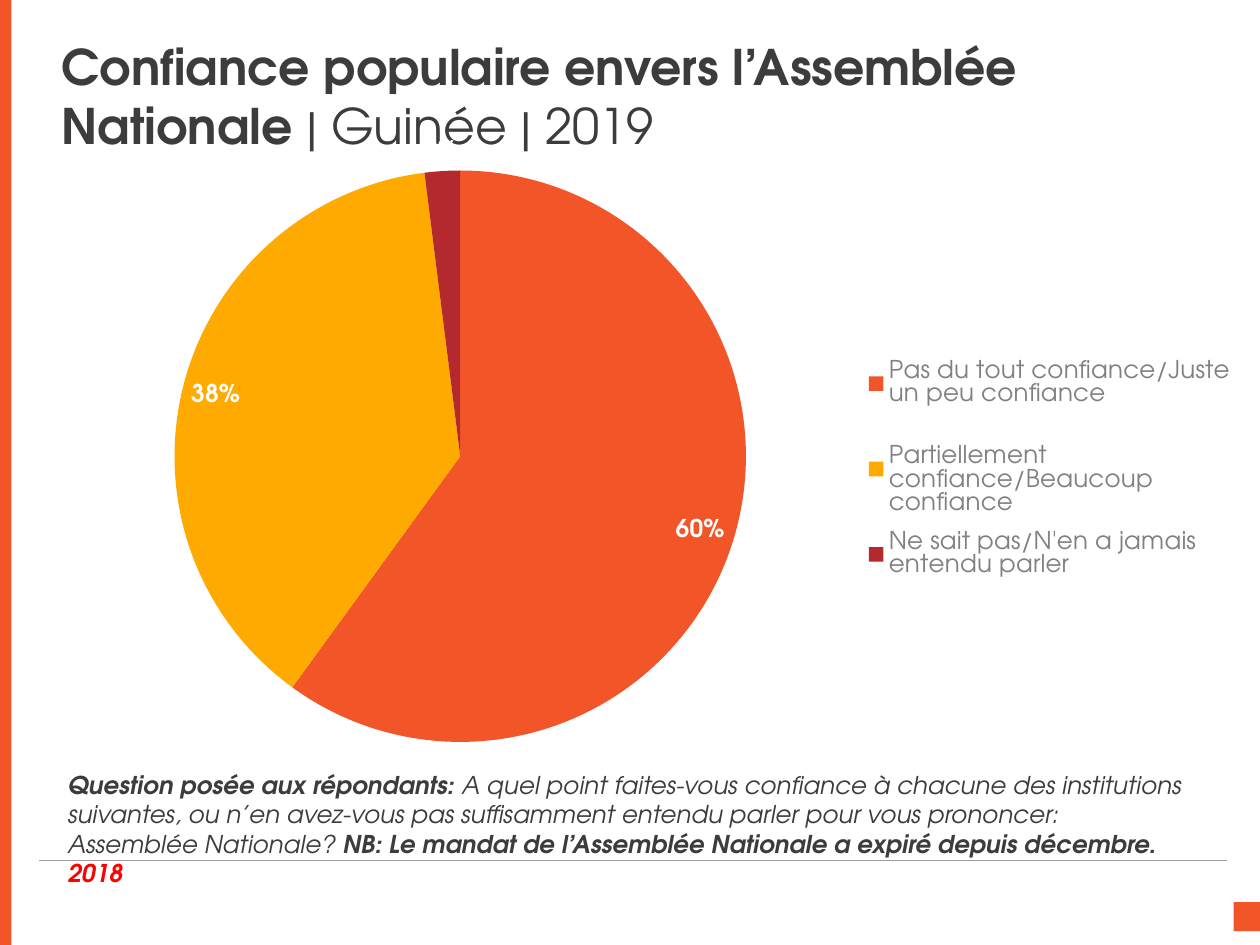
"""Build the slide on public trust in the Guinean National Assembly."""
from lxml.etree import SubElement
from pptx import Presentation
from pptx.chart.data import CategoryChartData
from pptx.dml.color import RGBColor
from pptx.enum.chart import XL_CHART_TYPE, XL_LABEL_POSITION, XL_LEGEND_POSITION
from pptx.enum.shapes import MSO_CONNECTOR, MSO_SHAPE
from pptx.enum.text import MSO_ANCHOR
from pptx.oxml import parse_xml
from pptx.oxml.ns import nsdecls, qn
from pptx.util import Inches, Pt

THEME = {
    "font": "TeX Gyre Adventor",
    "ink": "3C3C3C", "muted": "808080", "rule": "9E9E9E",
    "accent": "F25528", "alert": "FF0000", "label": "FFFFFF",
    "slices": ("F25528", "FFAA00", "B4292D"),
    "title": 28, "body": 14, "chart": 10, "rule_width": 0.25,
}
TITLE = [
    ("Confiance populaire envers l’Assemblée Nationale ", {"bold": True}),
    ("| Guinée | 2019", {}),
]
QUESTION = [
    ("Question posée aux répondants: ", {"bold": True}),
    ("A quel point faites-vous confiance à chacune des institutions suivantes, "
     "ou n’en avez-vous pas suffisamment entendu parler pour vous prononcer: "
     "Assemblée Nationale? ", {}),
    ("NB: Le mandat de l’Assemblée Nationale a expiré depuis décembre. ", {"bold": True}),
    ("2018", {"bold": True, "color": "alert"}),
]
ANSWERS = [
    ("Pas du tout confiance/Juste un peu confiance", 0.60),
    ("Partiellement confiance/Beaucoup confiance", 0.38),
    ("Ne sait pas/N'en a jamais entendu parler", 0.02),
]
BARS = [(0, 0, 0.09, 7.5), (9.79, 7.16, 0.22, 0.23)]
RULE = (0.31, 6.83, 9.74, 6.83)
TITLE_BOX = (0.39, 0.38, 9.32, 0.76)
QUESTION_BOX = (0.44, 6.06, 9.06, 0.69)
CHART_BOX = (0.44, 0.98, 9.45, 5.08)
PIE_SHARE = (0.1, 0.07, 0.48, 0.9)
LEGEND_SHARE = (0.67, 0.31, 0.33, 0.46)


def inches(values):
    return [Inches(v) for v in values]


def set_font(font, size, color, bold=False, italic=False):
    font.name, font.size = THEME["font"], Pt(size)
    font.bold, font.italic = bold, italic
    font.color.rgb = RGBColor.from_string(color)


def add_text(s, box, runs, size, anchor, italic=False):
    tf = s.shapes.add_textbox(*inches(box)).text_frame
    tf.word_wrap, tf.vertical_anchor = True, anchor
    p = tf.paragraphs[0]
    for text, style in runs:
        r = p.add_run()
        r.text = text
        set_font(r.font, size, THEME[style.get("color", "ink")],
                 style.get("bold", False), italic)


def add_bar(s, box):
    sp = s.shapes.add_shape(MSO_SHAPE.RECTANGLE, *inches(box))
    sp.shadow.inherit = False
    sp.fill.solid()
    sp.fill.fore_color.rgb = RGBColor.from_string(THEME["accent"])
    sp.line.fill.background()


def add_rule(s, ends):
    line = s.shapes.add_connector(MSO_CONNECTOR.STRAIGHT, *inches(ends))
    line.line.color.rgb = RGBColor.from_string(THEME["rule"])
    line.line.width = Pt(THEME["rule_width"])
    SubElement(line._element.spPr, qn("a:effectLst"))


def layout(share, inner=False):
    target = '<c:layoutTarget val="inner"/>' if inner else ""
    modes = "".join(f'<c:{k}Mode val="edge"/>' for k in "xy")
    sizes = "".join(f'<c:{k} val="{v}"/>' for k, v in zip("xywh", share))
    return parse_xml(f'<c:layout {nsdecls("c")}><c:manualLayout>'
                     f'{target}{modes}{sizes}</c:manualLayout></c:layout>')


def add_pie(s):
    names, values = zip(*ANSWERS)
    data = CategoryChartData(number_format="0%")
    data.categories = names
    data.add_series("Series 1", values)
    chart = s.shapes.add_chart(XL_CHART_TYPE.PIE, *inches(CHART_BOX), data).chart
    chart.has_title = False
    set_font(chart.font, THEME["chart"], THEME["ink"])
    plot = chart.plots[0]
    plot.vary_by_categories = True
    for i, color in enumerate(THEME["slices"]):
        fill = plot.series[0].points[i].format.fill
        fill.solid()
        fill.fore_color.rgb = RGBColor.from_string(color)
    plot.has_data_labels = True
    labels = plot.data_labels
    labels.show_value, labels.show_percentage = True, False
    labels.number_format, labels.number_format_is_linked = "0%", False
    labels.position = XL_LABEL_POSITION.BEST_FIT
    set_font(labels.font, THEME["body"], THEME["label"], bold=True)
    chart.has_legend = True
    legend = chart.legend
    legend.position, legend.include_in_layout = XL_LEGEND_POSITION.RIGHT, False
    set_font(legend.font, THEME["body"], THEME["muted"])
    legend._element.find(qn("c:legendPos")).addnext(layout(LEGEND_SHARE))
    area = chart._chartSpace.chart.plotArea
    for old in area.findall(qn("c:layout")):
        area.remove(old)
    area.insert(0, layout(PIE_SHARE, inner=True))


def main():
    prs = Presentation()
    prs.slide_width, prs.slide_height = Inches(10), Inches(7.5)
    s = prs.slides.add_slide(prs.slide_layouts[6])
    for box in BARS:
        add_bar(s, box)
    add_rule(s, RULE)
    add_text(s, TITLE_BOX, TITLE, THEME["title"], MSO_ANCHOR.MIDDLE)
    add_text(s, QUESTION_BOX, QUESTION, THEME["body"], MSO_ANCHOR.TOP, italic=True)
    add_pie(s)
    prs.save("out.pptx")


if __name__ == "__main__":
    main()
